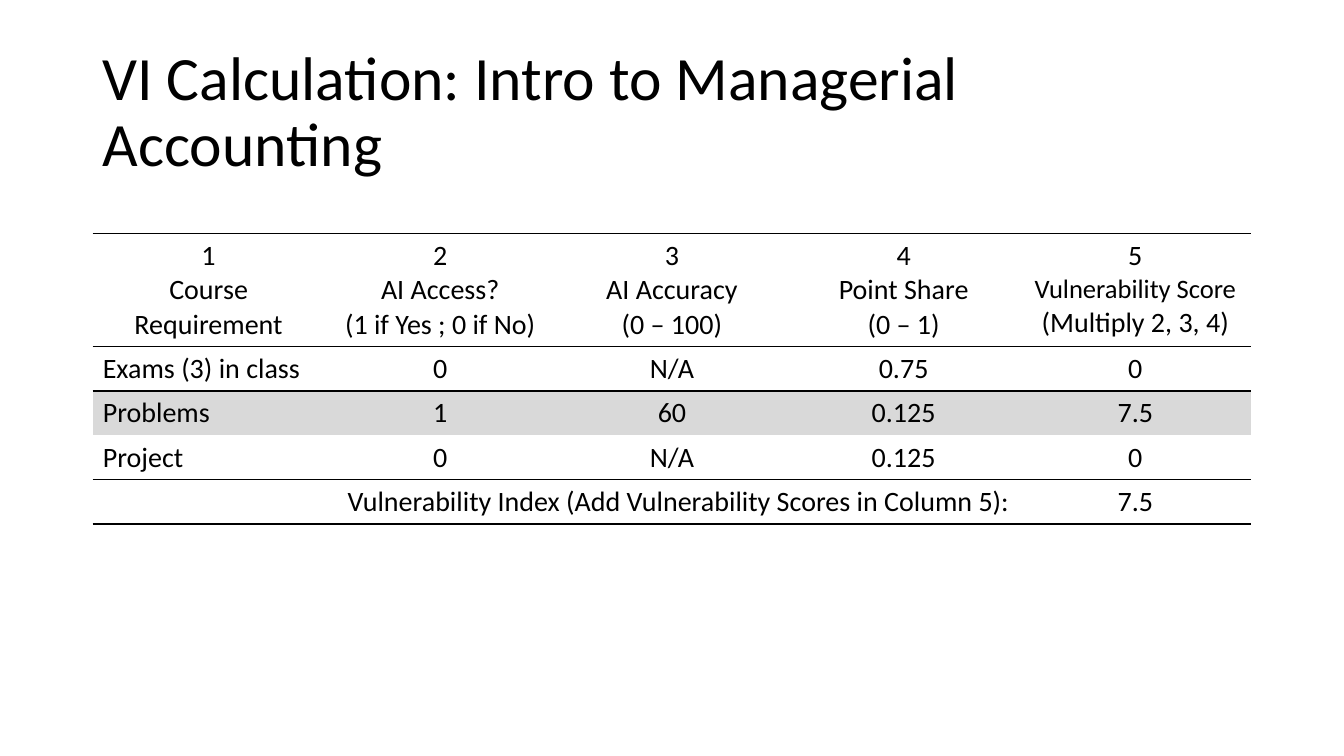
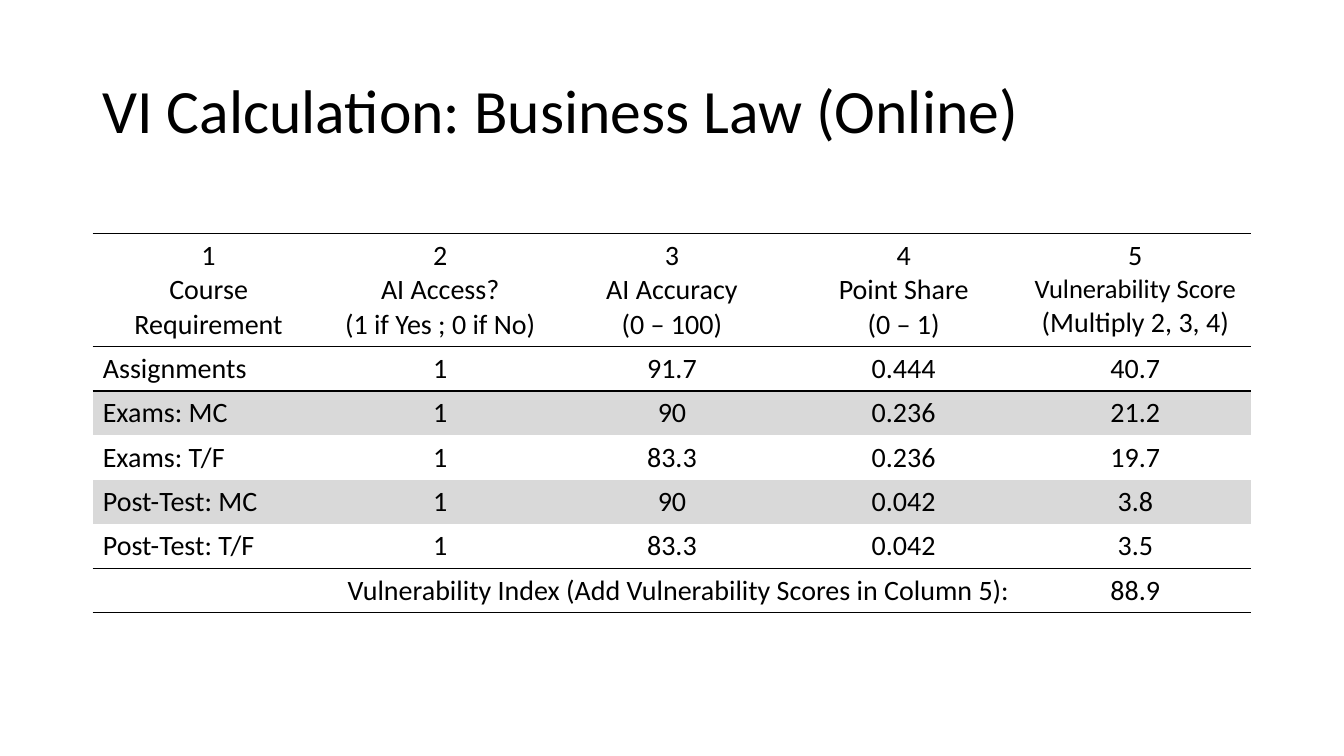
from lxml.etree import SubElement
from pptx import Presentation
from pptx.dml.color import RGBColor
from pptx.enum.text import MSO_ANCHOR as Anchor, PP_ALIGN as Align
from pptx.oxml.ns import qn
from pptx.util import Inches, Pt

FONT = "Calibri"
BLACK, WHITE, GREY = "000000", "FFFFFF", "D9D9D9"
WIDTH, HEIGHT = Inches(13.333), Inches(7.5)
MARGIN = Inches(0.92)
CONTENT = WIDTH - 2 * MARGIN
TITLE_TOP, TITLE_HEIGHT = Inches(0.4), Inches(1.45)
TABLE_TOP, HEADER_HEIGHT, ROW_HEIGHT = Inches(2.32), Inches(1.12), Inches(0.44)

HEADERS = [
    ["1", "Course Requirement"],
    ["2", "AI Access?", "(1 if Yes ; 0 if No)"],
    ["3", "AI Accuracy", "(0 – 100)"],
    ["4", "Point Share", "(0 – 1)"],
    ["5", [("Vulnerability Score ", 19), ("(Multiply 2, 3, 4)", 20)]],
]
TOTAL_LABEL = "Vulnerability Index (Add Vulnerability Scores in Column 5):"
COURSES = [
    ("VI Calculation: Intro to Managerial Accounting", [
        ["Exams (3) in class", "0", "N/A", "0.75", "0"],
        ["Problems", "1", "60", "0.125", "7.5"],
        ["Project", "0", "N/A", "0.125", "0"],
    ], "7.5"),
    ("VI Calculation: Business Law (Online)", [
        ["Assignments", "1", "91.7", "0.444", "40.7"],
        ["Exams: MC", "1", "90", "0.236", "21.2"],
        ["Exams: T/F", "1", "83.3", "0.236", "19.7"],
        ["Post-Test: MC", "1", "90", "0.042", "3.8"],
        ["Post-Test: T/F", "1", "83.3", "0.042", "3.5"],
    ], "88.9"),
]


def color(value):
    """Turn a hex string into a colour."""
    return RGBColor.from_string(value)


def write(frame, lines, size=20, fill=BLACK, align=Align.CENTER, spacing=None):
    """Write one paragraph per line; a line is text or a list of (text, size)."""
    for index, line in enumerate(lines):
        para = frame.paragraphs[0] if index == 0 else frame.add_paragraph()
        para.alignment = align
        para.line_spacing = spacing
        for text, points in [(line, size)] if isinstance(line, str) else line:
            span = para.add_run()
            span.text = text
            span.font.name = FONT
            span.font.size = Pt(points)
            span.font.color.rgb = color(fill)


def add_title(page, text):
    """Add the slide title."""
    box = page.shapes.add_textbox(MARGIN, TITLE_TOP, CONTENT, TITLE_HEIGHT)
    box.text_frame.word_wrap = True
    box.text_frame.vertical_anchor = Anchor.MIDDLE
    write(box.text_frame, [text], size=44, align=Align.LEFT, spacing=0.9)


def style_cell(cell, fill, top, bottom):
    """Fill a cell and rule only the requested horizontal sides."""
    cell.fill.solid()
    cell.fill.fore_color.rgb = color(fill)
    properties = cell._tc.get_or_add_tcPr()
    sides = [("a:lnL", False), ("a:lnR", False), ("a:lnT", top), ("a:lnB", bottom)]
    for index, (tag, ruled) in enumerate(sides):
        line = SubElement(properties, qn(tag), w=str(Pt(1)))
        if ruled:
            SubElement(SubElement(line, qn("a:solidFill")), qn("a:srgbClr"), val=BLACK)
        else:
            SubElement(line, qn("a:noFill"))
        properties.insert(index, line)


def add_score_table(page, body, total):
    """Add the table of headers, course requirements and vulnerability index."""
    count, columns = len(body) + 2, len(HEADERS)
    height = HEADER_HEIGHT + (count - 1) * ROW_HEIGHT
    table = page.shapes.add_table(
        count, columns, MARGIN, TABLE_TOP, CONTENT, height).table
    table.first_row = table.horz_banding = False
    rules = {0, 1, 2, count - 1, count}
    for index, row in enumerate(table.rows):
        row.height = ROW_HEIGHT if index else HEADER_HEIGHT
        shaded = 0 < index < count - 1 and index % 2 == 0
        for cell in row.cells:
            style_cell(cell, GREY if shaded else WHITE, index in rules, index + 1 in rules)

    for column, lines in enumerate(HEADERS):
        write(table.cell(0, column).text_frame, lines)
    for index, values in enumerate(body, 1):
        for column, value in enumerate(values):
            write(table.cell(index, column).text_frame, [value],
                  align=Align.CENTER if column else Align.LEFT)

    label = table.cell(count - 1, 0)
    label.merge(table.cell(count - 1, columns - 2))
    write(label.text_frame, [TOTAL_LABEL], align=Align.RIGHT)
    write(table.cell(count - 1, columns - 1).text_frame, [total])


def main():
    """Build one slide per course and save the deck."""
    deck = Presentation()
    deck.slide_width, deck.slide_height = WIDTH, HEIGHT
    for title, body, total in COURSES:
        page = deck.slides.add_slide(deck.slide_layouts[6])
        add_title(page, title)
        add_score_table(page, body, total)
    deck.save("out.pptx")


if __name__ == "__main__":
    main()
